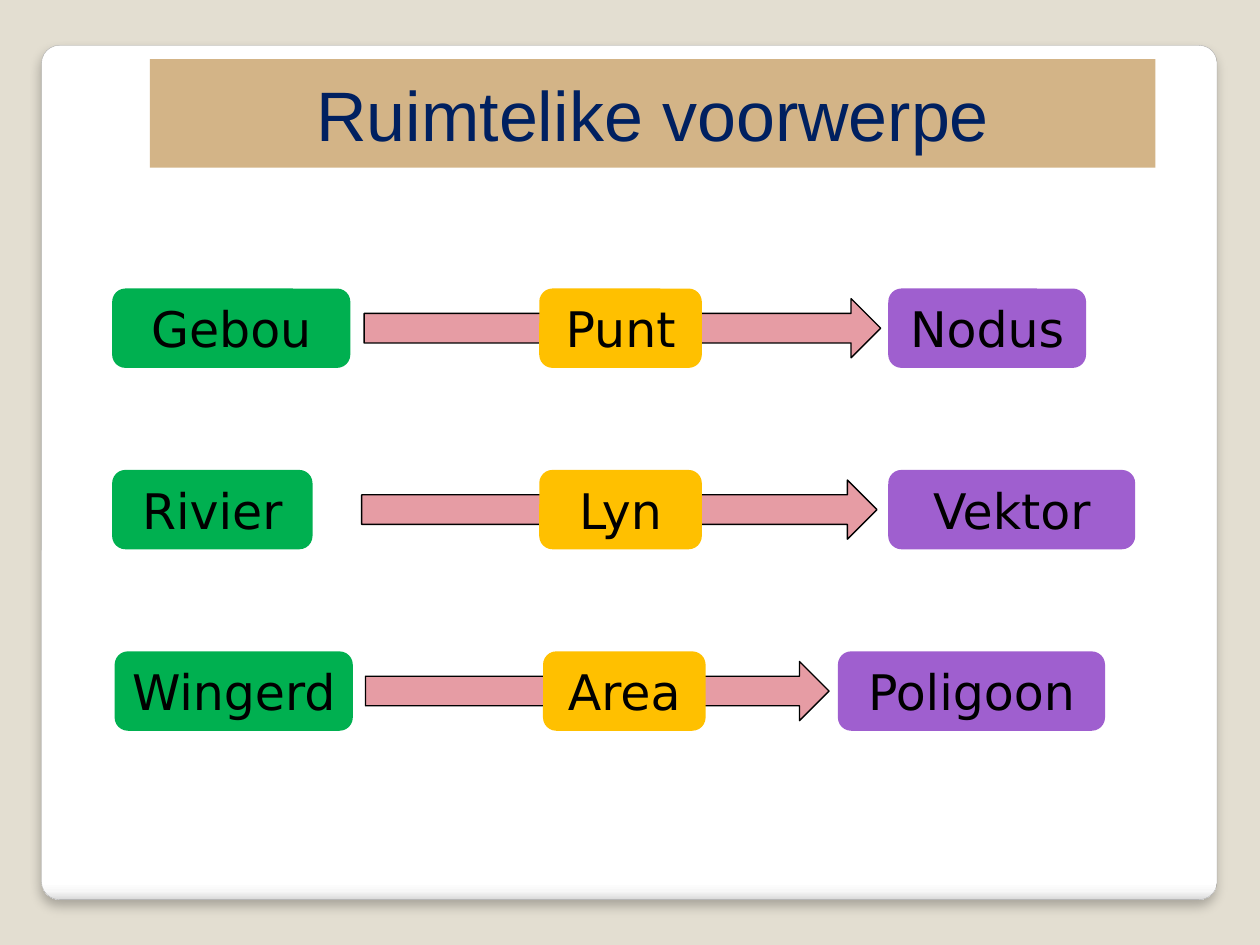
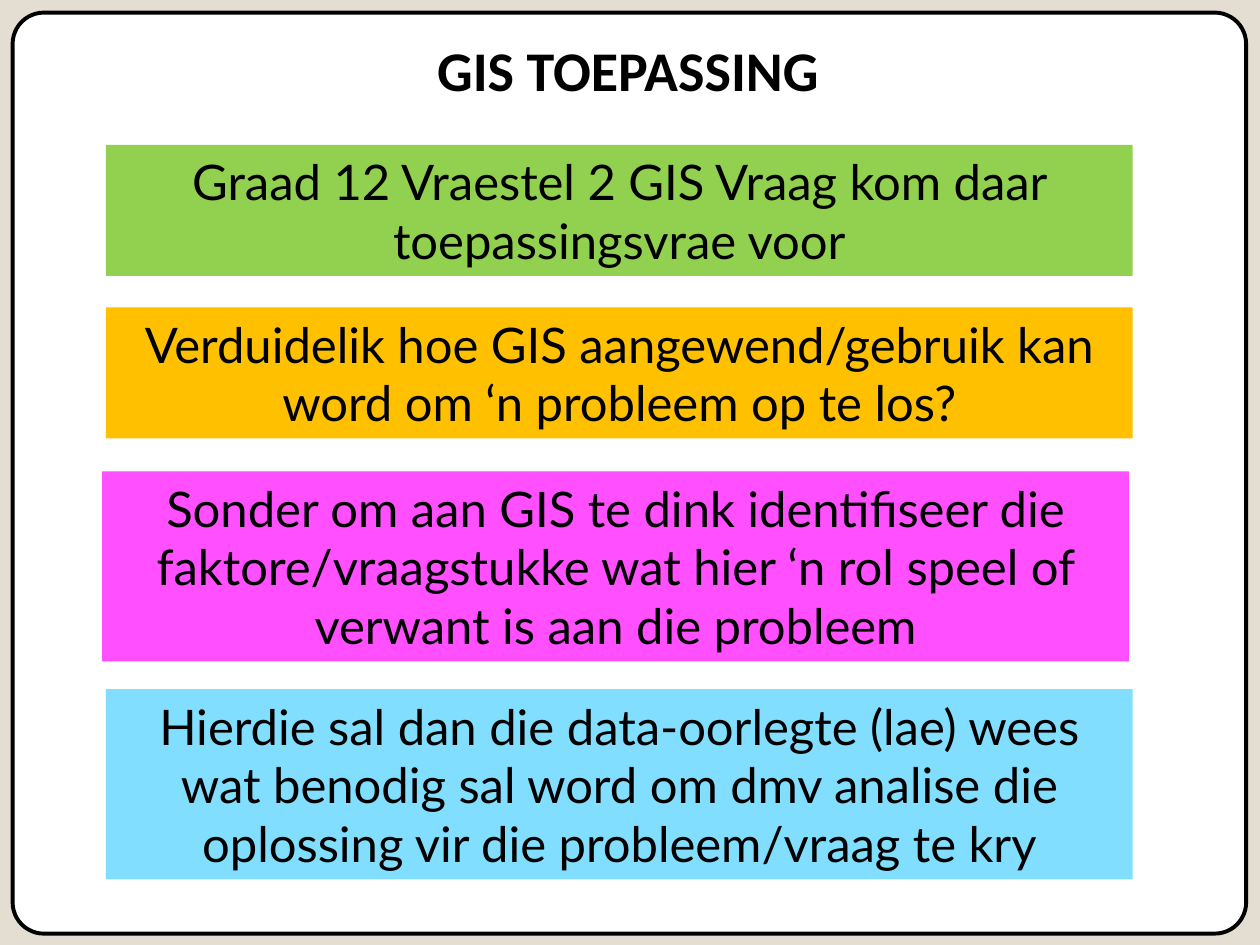
"""Build two Afrikaans GIS slides: spatial objects and GIS application."""
from dataclasses import dataclass
from typing import Optional

from lxml.etree import SubElement
from pptx import Presentation
from pptx.dml.color import RGBColor
from pptx.enum.shapes import MSO_SHAPE
from pptx.enum.text import MSO_ANCHOR, MSO_AUTO_SIZE, PP_ALIGN
from pptx.oxml import parse_xml
from pptx.oxml.ns import nsdecls, qn
from pptx.util import Inches, Pt

INK = "000000"
WHITE = "FFFFFF"
BACKDROP = "E3DED1"
TITLE_BAND = "D3B487"
NAVY = "002060"
OBJECT_GREEN = "00B050"
AMBER = "FFC000"
DATA_PURPLE = "9F5FCF"
ARROW_PINK = "E69CA4"
PANEL_EDGE = "A4A4A4"
PANEL_STOPS = ((0, WHITE), (98, WHITE), (99, "F7F7F7"), (100, "DADADA"))

FRAME_FORMAT = {
    "word_wrap": True,
    "auto_size": MSO_AUTO_SIZE.SHAPE_TO_FIT_TEXT,
    "vertical_anchor": MSO_ANCHOR.MIDDLE,
    "margin_left": Inches(0.1),
    "margin_right": Inches(0.1),
    "margin_top": Inches(0.05),
    "margin_bottom": Inches(0.05),
}
LABEL_FONT = {"name": "DejaVu Sans", "size": Pt(28)}
STEP_FONT = {"name": "Lato", "size": Pt(28)}
BAND_TITLE_FONT = {"name": "Arial", "size": Pt(40), "bold": False}
PLAIN_TITLE_FONT = {"name": "Calibri", "size": Pt(32), "bold": True}

ROW_TOP, ROW_PITCH = 2.29, 1.44
LABEL_HEIGHT, ARROW_HEIGHT = 0.63, 0.47
CONCEPT_WIDTH = 1.29
STEP_LEFT, STEP_WIDTH = 0.84, 8.15


@dataclass(frozen=True)
class Box:
    """Position and size in inches."""
    left: float
    top: float
    width: float
    height: float

    def lengths(self) -> tuple:
        """Return the four values as lengths."""
        return tuple(Inches(v) for v in (self.left, self.top, self.width, self.height))


@dataclass(frozen=True)
class Label:
    """Caption with its horizontal extent."""
    text: str
    left: float
    width: float


@dataclass(frozen=True)
class ObjectRow:
    """Real object, its spatial concept and its data form."""
    thing: Label
    concept: Label
    form: Label
    arrow_left: float
    arrow_width: float


@dataclass(frozen=True)
class Step:
    """Coloured statement of the application slide."""
    text: str
    color: str
    top: float
    height: float
    left: float = STEP_LEFT


OBJECT_ROWS = (
    ObjectRow(Label("Gebou", 0.89, 1.89), Label("Punt", 4.28, CONCEPT_WIDTH),
              Label("Nodus", 7.05, 1.57), 2.89, 4.1),
    ObjectRow(Label("Rivier", 0.89, 1.59), Label("Lyn", 4.28, CONCEPT_WIDTH),
              Label("Vektor", 7.05, 1.96), 2.87, 4.09),
    ObjectRow(Label("Wingerd", 0.91, 1.89), Label("Area", 4.31, CONCEPT_WIDTH),
              Label("Poligoon", 6.65, 2.12), 2.9, 3.68),
)
STEPS = (
    Step("Graad 12 Vraestel 2 GIS Vraag kom daar toepassingsvrae voor",
         "92D050", 1.15, 1.04),
    Step("Verduidelik hoe GIS aangewend/gebruik kan word om ‘n probleem op te los?",
         AMBER, 2.44, 1.04),
    Step("Sonder om aan GIS te dink identifiseer die faktore/vraagstukke wat hier "
         "‘n rol speel of verwant is aan die probleem", "FF4FFF", 3.74, 1.51, 0.81),
    Step("Hierdie sal dan die data-oorlegte (lae) wees wat benodig sal word om dmv "
         "analise die oplossing vir die probleem/vraag te kry", "81DEFF", 5.47, 1.51),
)


def rgb(color: str) -> RGBColor:
    """Turn a hex string into a colour."""
    return RGBColor.from_string(color)


def apply(target, values: dict) -> None:
    """Set every format value on the target."""
    for name, value in values.items():
        setattr(target, name, value)


def write(shape, text: str, font: dict, color: str = INK) -> None:
    """Put centred, formatted text in a shape."""
    shape.text_frame.text = text
    apply(shape.text_frame, FRAME_FORMAT)
    paragraph = shape.text_frame.paragraphs[0]
    paragraph.alignment = PP_ALIGN.CENTER
    run_font = paragraph.runs[0].font
    apply(run_font, font)
    run_font.color.rgb = rgb(color)


def draw(shapes, kind: MSO_SHAPE, box: Box, fill: str, edge: Optional[str] = None,
         edge_width: float = 0.75, rounding: Optional[float] = None):
    """Add a flat preset shape."""
    shape = shapes.add_shape(kind, *box.lengths())
    shape.shadow.inherit = False
    shape.fill.solid()
    shape.fill.fore_color.rgb = rgb(fill)
    if edge:
        shape.line.color.rgb = rgb(edge)
        shape.line.width = Pt(edge_width)
    else:
        shape.line.fill.background()
    if rounding is not None:
        shape.adjustments[0] = rounding
    return shape


def draw_panel(slide) -> None:
    """Add the white panel with its shaded lower edge and soft shadow."""
    panel = draw(slide.shapes, MSO_SHAPE.ROUNDED_RECTANGLE, Box(0.33, 0.36, 9.33, 6.78),
                 WHITE, PANEL_EDGE, 0.16, 0.021)
    properties = panel._element.spPr
    stops = "".join(f'<a:gs pos="{pos * 1000}"><a:srgbClr val="{color}"/></a:gs>'
                    for pos, color in PANEL_STOPS)
    gradient = parse_xml(f'<a:gradFill {nsdecls("a")} rotWithShape="1"><a:gsLst>{stops}'
                         '</a:gsLst><a:lin ang="5400000" scaled="0"/></a:gradFill>')
    properties.replace(properties.find(qn("a:solidFill")), gradient)
    shadow = SubElement(properties.find(qn("a:effectLst")), qn("a:outerShdw"),
                        blurRad=str(Pt(6)), dist=str(Pt(4)), dir="5400000",
                        algn="t", rotWithShape="0")
    shade = SubElement(shadow, qn("a:srgbClr"), val=INK)
    SubElement(shade, qn("a:alpha"), val="25000")


def place_title(slide, text: str, box: Box, font: dict, color: str = INK,
                band: Optional[str] = None) -> None:
    """Move the title to the front as a rounded box and format it."""
    title = slide.shapes.title
    apply(title, dict(zip(("left", "top", "width", "height"), box.lengths())))
    outline = SubElement(title._element.spPr, qn("a:prstGeom"), prst="roundRect")
    SubElement(outline, qn("a:avLst"))
    if band:
        title.fill.solid()
        title.fill.fore_color.rgb = rgb(band)
    write(title, text, font, color)
    slide.shapes._spTree.append(title._element)


def draw_label(shapes, label: Label, top: float, color: str) -> None:
    """Add one rounded caption of an object row."""
    box = Box(label.left, top, label.width, LABEL_HEIGHT)
    write(draw(shapes, MSO_SHAPE.ROUNDED_RECTANGLE, box, color), label.text, LABEL_FONT)


def draw_row(slide, row: ObjectRow, top: float) -> None:
    """Add a grouped row: object, arrow through concept, data form."""
    shapes = slide.shapes.add_group_shape().shapes
    draw_label(shapes, row.thing, top, OBJECT_GREEN)
    draw_label(shapes, row.form, top, DATA_PURPLE)
    arrow_top = top + (LABEL_HEIGHT - ARROW_HEIGHT) / 2
    draw(shapes, MSO_SHAPE.RIGHT_ARROW,
         Box(row.arrow_left, arrow_top, row.arrow_width, ARROW_HEIGHT), ARROW_PINK, INK)
    draw_label(shapes, row.concept, top, AMBER)


def add_slide(deck):
    """Add a title-only slide with the shared panel."""
    slide = deck.slides.add_slide(deck.slide_layouts[5])
    draw_panel(slide)
    return slide


def build_objects(deck) -> None:
    """Build the slide on spatial objects."""
    slide = add_slide(deck)
    place_title(slide, "Ruimtelike voorwerpe", Box(1.19, 0.47, 7.98, 0.86),
                BAND_TITLE_FONT, NAVY, TITLE_BAND)
    for index, row in enumerate(OBJECT_ROWS):
        draw_row(slide, row, ROW_TOP + index * ROW_PITCH)


def build_application(deck) -> None:
    """Build the slide on applying GIS."""
    slide = add_slide(deck)
    draw(slide.shapes, MSO_SHAPE.ROUNDED_RECTANGLE, Box(0.1, 0.1, 9.79, 7.31),
         WHITE, INK, 2.25, 0.034)
    place_title(slide, "GIS TOEPASSING", Box(0.75, 0.19, 8.47, 0.71), PLAIN_TITLE_FONT)
    for step in STEPS:
        box = Box(step.left, step.top, STEP_WIDTH, step.height)
        write(draw(slide.shapes, MSO_SHAPE.RECTANGLE, box, step.color), step.text, STEP_FONT)


def main() -> None:
    """Create and save the deck."""
    deck = Presentation()
    deck.slide_width, deck.slide_height = Inches(10), Inches(7.5)
    backdrop = deck.slide_master.background.fill
    backdrop.solid()
    backdrop.fore_color.rgb = rgb(BACKDROP)
    build_objects(deck)
    build_application(deck)
    deck.save("out.pptx")


if __name__ == "__main__":
    main()
